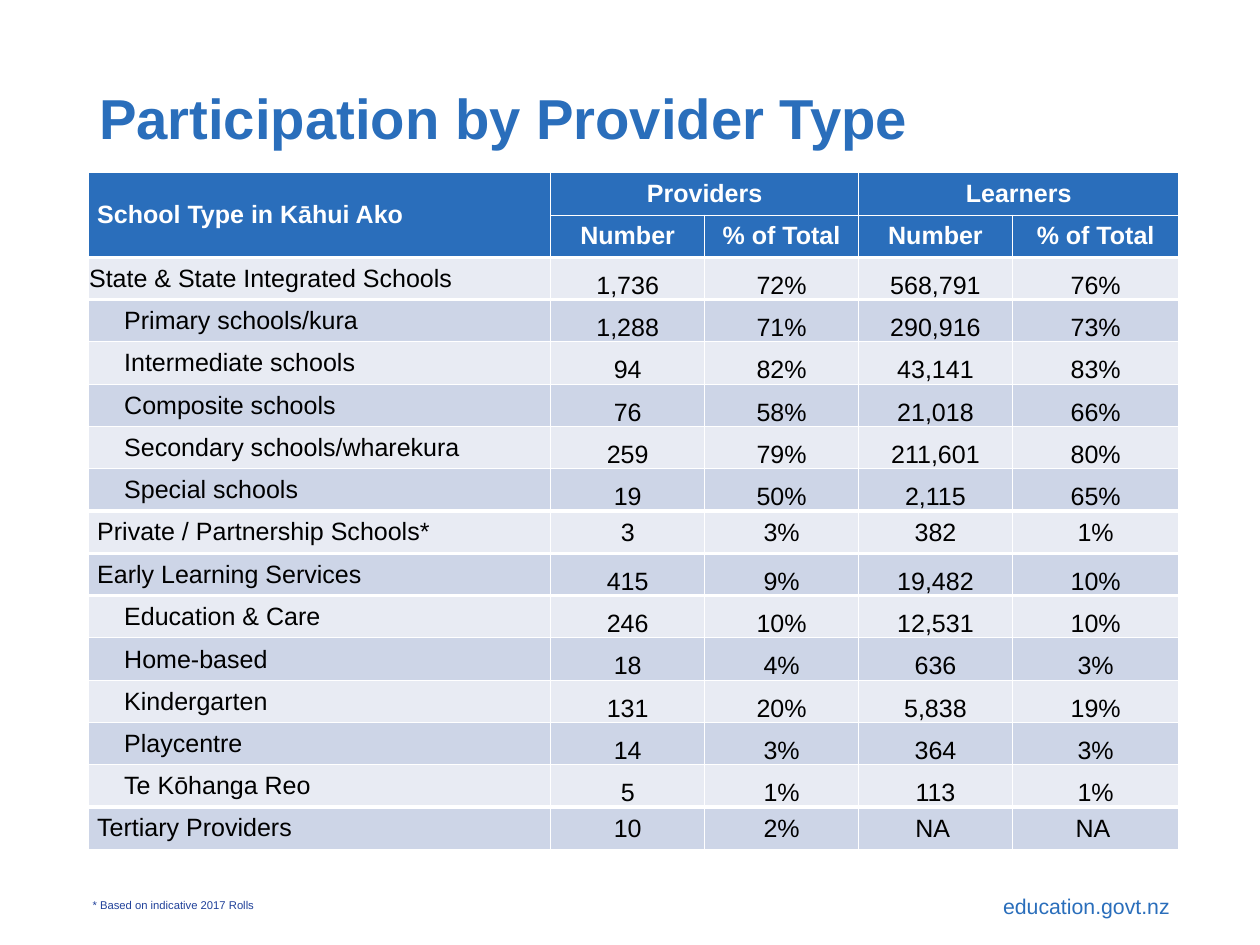
from lxml import etree
from pptx import Presentation
from pptx.dml.color import RGBColor
from pptx.enum.text import MSO_ANCHOR, MSO_AUTO_SIZE, PP_ALIGN
from pptx.oxml.ns import qn
from pptx.util import Inches, Pt

LEFT, CENTER, RIGHT = PP_ALIGN.LEFT, PP_ALIGN.CENTER, PP_ALIGN.RIGHT
TOP, MIDDLE, BOTTOM = MSO_ANCHOR.TOP, MSO_ANCHOR.MIDDLE, MSO_ANCHOR.BOTTOM
GROW = MSO_AUTO_SIZE.SHAPE_TO_FIT_TEXT

BLUE, NAVY, WHITE, BLACK = "2A6EBB", "20419A", "FFFFFF", "000000"
BANDS = ("E8EBF3", "CDD5E7")
THIN, THICK = 1, 3
ROOMY = (0.1, 0.05, 0.1, 0.05)
TIGHT = (0.01, 0.01, 0.01, 0)
TEXT_BOX_MARGINS = (0.14, 0.07, 0.14, 0.07)

COLUMN_WIDTHS = (5.14, 1.71, 1.71, 1.71, 1.85)
ROW_HEIGHT = 0.47
HEADER_ROWS = (
    ("School Type in Kāhui Ako", "Providers", "", "Learners", ""),
    ("", "Number", "% of Total", "Number", "% of Total"),
)
SCHOOL_TOTAL = {"level": 0, "indent": 0, "margins": TIGHT, "anchor": BOTTOM}
SCHOOL = {"level": 1, "indent": 0.3, "margins": ROOMY, "anchor": BOTTOM}
SINGLE = {"level": 0, "indent": 0, "margins": ROOMY, "anchor": MIDDLE}
EARLY_TOTAL = {"level": 0, "indent": 0, "margins": ROOMY, "anchor": BOTTOM}
EARLY = {"level": 1, "indent": 0.39, "margins": TIGHT, "anchor": BOTTOM}
PROVIDER_ROWS = (
    (SCHOOL_TOTAL, "State & State Integrated Schools", "1,736", "72%", "568,791", "76%"),
    (SCHOOL, "Primary schools/kura", "1,288", "71%", "290,916", "73%"),
    (SCHOOL, "Intermediate schools", "94", "82%", "43,141", "83%"),
    (SCHOOL, "Composite schools", "76", "58%", "21,018", "66%"),
    (SCHOOL, "Secondary schools/wharekura", "259", "79%", "211,601", "80%"),
    (SCHOOL, "Special schools", "19", "50%", "2,115", "65%"),
    (SINGLE, "Private / Partnership Schools*", "3", "3%", "382", "1%"),
    (EARLY_TOTAL, "Early Learning Services", "415", "9%", "19,482", "10%"),
    (EARLY, "Education & Care", "246", "10%", "12,531", "10%"),
    (EARLY, "Home-based", "18", "4%", "636", "3%"),
    (EARLY, "Kindergarten", "131", "20%", "5,838", "19%"),
    (EARLY, "Playcentre", "14", "3%", "364", "3%"),
    (EARLY, "Te Kōhanga Reo", "5", "1%", "113", "1%"),
    (SINGLE, "Tertiary Providers", "10", "2%", "NA ", "NA "),
)


def color(value):
    return RGBColor.from_string(value)


def set_attributes(target, values):
    for name, value in values.items():
        setattr(target, name, value)


def set_margins(target, margins):
    sides = ("margin_left", "margin_top", "margin_right", "margin_bottom")
    set_attributes(target, {side: Inches(margin) for side, margin in zip(sides, margins)})


def write(paragraph, text, size, text_color, bold=False, alignment=LEFT):
    paragraph.alignment = alignment
    run = paragraph.add_run()
    run.text = text
    set_attributes(run.font, {"name": "Arial", "size": Pt(size), "bold": bold})
    run.font.color.rgb = color(text_color)


def add_text(slide, box, text, size, text_color, margins=ROOMY, frame=None, **text_format):
    shape = slide.shapes.add_textbox(*(Inches(length) for length in box))
    set_attributes(shape.text_frame, {"word_wrap": True, **(frame or {})})
    set_margins(shape.text_frame, margins)
    paragraph = shape.text_frame.paragraphs[0]
    write(paragraph, text, size, text_color, **text_format)
    return paragraph


def set_borders(cell, top, bottom):
    properties = cell._tc.get_or_add_tcPr()
    widths = {"a:lnL": THIN, "a:lnR": THIN, "a:lnT": top, "a:lnB": bottom}
    for tag, width in widths.items():
        line = etree.SubElement(properties, qn(tag), w=str(Pt(width)))
        fill = etree.SubElement(line, qn("a:solidFill"))
        etree.SubElement(fill, qn("a:srgbClr"), val=WHITE)


def style_cell(cell, fill, margins, anchor, top, bottom):
    set_borders(cell, top, bottom)
    cell.fill.solid()
    cell.fill.fore_color.rgb = color(fill)
    set_margins(cell, margins)
    cell.vertical_anchor = anchor


def fill_header(table):
    for row, texts in enumerate(HEADER_ROWS):
        bottom = THICK if row == len(HEADER_ROWS) - 1 else THIN
        for column, text in enumerate(texts):
            cell = table.cell(row, column)
            style_cell(cell, BLUE, ROOMY, MIDDLE, THIN, bottom)
            if text:
                alignment = CENTER if column else LEFT
                write(cell.text_frame.paragraphs[0], text, 20, WHITE, True, alignment)
    for first, last in (((0, 0), (1, 0)), ((0, 1), (0, 2)), ((0, 3), (0, 4))):
        table.cell(*first).merge(table.cell(*last))


def fill_providers(table):
    levels = [style["level"] for style, *_ in PROVIDER_ROWS]
    inner_edges = [THICK if 0 in pair else THIN for pair in zip(levels, levels[1:])]
    edges = [THICK, *inner_edges, THIN]
    for index, (style, *texts) in enumerate(PROVIDER_ROWS):
        for column, text in enumerate(texts):
            cell = table.cell(index + len(HEADER_ROWS), column)
            margins = TIGHT if column else style["margins"]
            anchor = style["anchor"] if column else MIDDLE
            style_cell(cell, BANDS[index % 2], margins, anchor, *edges[index:index + 2])
            paragraph = cell.text_frame.paragraphs[0]
            write(paragraph, text, 20, BLACK, alignment=CENTER if column else LEFT)
            if column == 0 and style["level"]:
                paragraph.level = style["level"]
                properties = paragraph._p.get_or_add_pPr()
                properties.set("marL", str(Inches(style["indent"])))
                properties.set("indent", "0")


def add_participation_table(slide):
    row_count = len(HEADER_ROWS) + len(PROVIDER_ROWS)
    frame = slide.shapes.add_table(
        row_count, len(COLUMN_WIDTHS), Inches(0.98), Inches(1.92),
        Inches(sum(COLUMN_WIDTHS)), Inches(ROW_HEIGHT * row_count))
    table = frame.table
    for column, width in zip(table.columns, COLUMN_WIDTHS):
        column.width = Inches(width)
    for row in table.rows:
        row.height = Inches(ROW_HEIGHT)
    fill_header(table)
    fill_providers(table)


def main():
    presentation = Presentation()
    set_attributes(presentation, {"slide_width": Inches(14), "slide_height": Inches(10.5)})
    slide = presentation.slides.add_slide(presentation.slide_layouts[6])
    add_text(slide, (9.96, 9.86, 3.18, 0.42), "education.govt.nz", 17, BLUE,
             TEXT_BOX_MARGINS, {"auto_size": GROW}, alignment=RIGHT)
    title = add_text(slide, (0.96, 0.56, 10.42, 1.58), "Participation by Provider Type", 45, BLUE,
                     TEXT_BOX_MARGINS, {"vertical_anchor": MIDDLE}, bold=True)
    title.line_spacing = 0.9
    add_participation_table(slide)
    add_text(slide, (0.93, 9.93, 2.01, 0.25), "* Based on indicative 2017 Rolls", 9, NAVY,
             frame={"word_wrap": False, "auto_size": GROW, "vertical_anchor": TOP})
    presentation.save("out.pptx")


if __name__ == "__main__":
    main()
